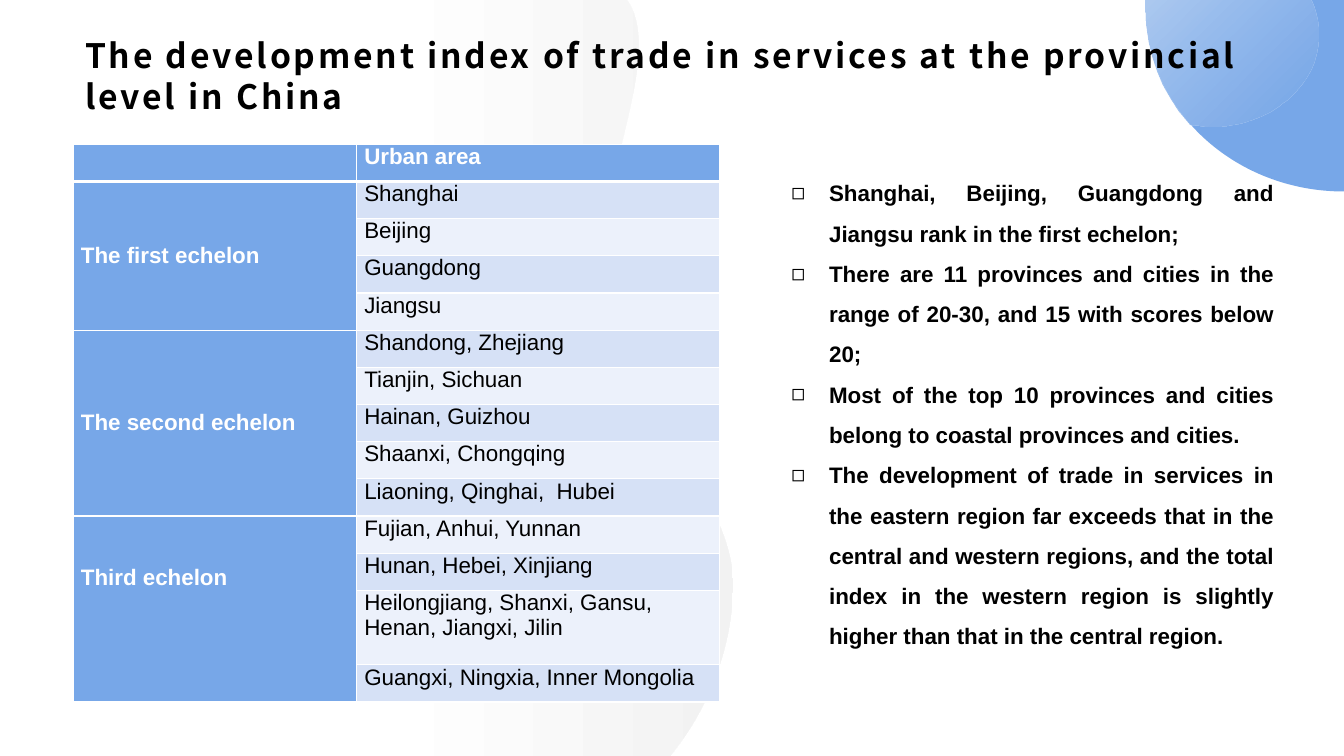
"""Builds the slide on the provincial trade in services index."""
from dataclasses import dataclass
from typing import Any, Optional

from lxml.etree import SubElement
from pptx import Presentation
from pptx.dml.color import RGBColor
from pptx.enum.text import MSO_ANCHOR, MSO_AUTO_SIZE, PP_ALIGN
from pptx.oxml.ns import qn
from pptx.util import Pt

BLUE = RGBColor(0x77, 0xA7, 0xE8)
LIGHT_BLUE = RGBColor(0xAD, 0xCA, 0xF1)
BAND_DARK = RGBColor(0xD6, 0xE1, 0xF6)
BAND_LIGHT = RGBColor(0xEC, 0xF1, 0xFB)
GREY = RGBColor(0xF2, 0xF2, 0xF2)
WHITE = RGBColor(0xFF, 0xFF, 0xFF)
BLACK = RGBColor(0, 0, 0)
TITLE_FONT = "Noto Sans CJK SC"
ROW_HEIGHT = 26.58


@dataclass
class Outline:
    start: tuple[float, float]
    steps: list[tuple[float, ...]]
    colors: list[RGBColor]
    angle: float = 0
    end_alpha: int = 100


@dataclass
class Echelon:
    name: str
    areas: list[str]
    top: Optional[float] = None


OUTLINES = [
    Outline((274.3, 540), [
        (274.3, 0), (447.8, 0), (449.3, 2.2),
        (475.2, 45.4, 419, 143.3, 431.3, 210.2),
        (444.2, 279.4, 520.6, 352.8, 523.4, 412.6),
        (524.9, 453.6, 509.8, 498.2, 485.3, 531.4), (478.8, 540),
    ], [WHITE, GREY]),
    Outline((818.6, 0), [
        (960, 0), (960, 136.8), (882, 136.8, 818.6, 78.5, 818.6, 6.5),
    ], [BLUE]),
    Outline((818.6, 0), [
        (936, 0), (938.2, 5), (940.3, 11.5, 941.8, 18, 941.8, 25.2),
        (941.8, 61.2, 907.2, 90.7, 864.7, 90.7),
        (862.6, 90.7, 859.7, 90.7, 857.5, 90), (851, 89.3), (850.3, 89.3),
        (830.2, 67, 818.6, 38.2, 818.6, 6.5),
    ], [LIGHT_BLUE, BLUE], 315, 70),
]

ECHELONS = [
    Echelon("The first echelon", ["Shanghai", "Beijing", "Guangdong", "Jiangsu"]),
    Echelon("The second echelon", [
        "Shandong, Zhejiang", "Tianjin, Sichuan", "Hainan, Guizhou",
        "Shaanxi, Chongqing", "Liaoning, Qinghai,  Hubei"]),
    Echelon("Third echelon", [
        "Fujian, Anhui, Yunnan", "Hunan, Hebei, Xinjiang",
        "Heilongjiang, Shanxi, Gansu,\nHenan, Jiangxi, Jilin",
        "Guangxi, Ningxia, Inner Mongolia"], 35.5),
]

FINDINGS = [
    "Shanghai, Beijing, Guangdong and Jiangsu rank in the first echelon;",
    "There are 11 provinces and cities in the range of 20-30, and 15 with scores below 20;",
    "Most of the top 10 provinces and cities belong to coastal provinces and cities.",
    "The development of trade in services in the eastern region far exceeds that in the "
    "central and western regions, and the total index in the western region is slightly "
    "higher than that in the central region.",
]


def write(tf: Any, text: str, *, size: float = 16, font: str = "Arial",
          color: RGBColor = BLACK, bold: bool = False, tracking: float = 0,
          align: PP_ALIGN = PP_ALIGN.LEFT, line: float = 1,
          bullet: str = "", hang: float = 0) -> None:
    for i, part in enumerate(text.split("\n")):
        p = tf.add_paragraph() if i else tf.paragraphs[0]
        p.alignment, p.line_spacing = align, line
        p.space_before = p.space_after = Pt(0)
        if bullet:
            pPr = p._p.get_or_add_pPr()
            pPr.set("marL", str(Pt(hang)))
            pPr.set("indent", str(-Pt(hang)))
            SubElement(pPr, qn("a:buChar"), char=bullet)
        r = p.add_run()
        r.text = part
        r.font.size, r.font.name, r.font.bold = Pt(size), font, bold
        r.font.color.rgb = color
        rPr = r._r.get_or_add_rPr()
        SubElement(rPr, qn("a:ea"), typeface=font)
        if tracking:
            rPr.set("spc", str(round(tracking * 100)))


def bend(sp: Any, steps: list[tuple[float, ...]]) -> None:
    lines = list(sp._element.spPr.iter(qn("a:lnTo")))
    for ln, step in zip(lines, steps):
        if len(step) == 6:
            ln.tag = qn("a:cubicBezTo")
            for pt in list(ln):
                ln.remove(pt)
            for x, y in zip(step[::2], step[1::2]):
                SubElement(ln, qn("a:pt"), x=str(Pt(x) - sp.left), y=str(Pt(y) - sp.top))


def draw_outline(s: Any, outline: Outline) -> None:
    x, y = outline.start
    builder = s.shapes.build_freeform(Pt(x), Pt(y))
    builder.add_line_segments([(Pt(p[-2]), Pt(p[-1])) for p in outline.steps], close=True)
    sp = builder.convert_to_shape()
    bend(sp, outline.steps)
    sp.shadow.inherit = False
    sp.line.fill.background()
    if len(outline.colors) == 1:
        sp.fill.solid()
        sp.fill.fore_color.rgb = outline.colors[0]
    else:
        sp.fill.gradient()
        sp.fill.gradient_angle = outline.angle
        for stop, color in zip(sp.fill.gradient_stops, outline.colors):
            stop.color.rgb = color
        if outline.end_alpha < 100:
            last = list(sp._element.spPr.iter(qn("a:srgbClr")))[-1]
            SubElement(last, qn("a:alpha"), val=str(outline.end_alpha * 1000))
    s.shapes.title._element.addprevious(sp._element)


def place(sp: Any, left: float, top: float, width: float, height: float) -> Any:
    sp.left, sp.top, sp.width, sp.height = Pt(left), Pt(top), Pt(width), Pt(height)
    tf = sp.text_frame
    tf.word_wrap, tf.auto_size = True, MSO_AUTO_SIZE.NONE
    tf.vertical_anchor = MSO_ANCHOR.TOP
    return tf


def format_cell(cell: Any, fill: RGBColor, bottom: float = 1, top: float = 1) -> None:
    cell.margin_left = cell.margin_right = Pt(5.4)
    cell.margin_top = cell.margin_bottom = Pt(0)
    tcPr = cell._tc.get_or_add_tcPr()
    for side, width in (("L", 1), ("R", 1), ("T", top), ("B", bottom)):
        ln = SubElement(tcPr, qn(f"a:ln{side}"), w=str(Pt(width)))
        SubElement(SubElement(ln, qn("a:solidFill")), qn("a:srgbClr"), val=str(WHITE))
    cell.fill.solid()
    cell.fill.fore_color.rgb = fill


def draw_table(s: Any) -> None:
    count = 1 + sum(len(e.areas) for e in ECHELONS)
    table = s.shapes.add_table(count, 2, Pt(52.4), Pt(103), Pt(461.6),
                               Pt(ROW_HEIGHT * (count + 1))).table
    table.columns[0].width, table.columns[1].width = Pt(202.4), Pt(259.2)
    for cell in table.rows[0].cells:
        format_cell(cell, BLUE, bottom=3)
    write(table.cell(0, 1).text_frame, "Urban area", color=WHITE, bold=True)
    table.rows[0].height = Pt(ROW_HEIGHT)
    row = 1
    for e in ECHELONS:
        name = table.cell(row, 0)
        name.merge(table.cell(row + len(e.areas) - 1, 0))
        write(name.text_frame, e.name, color=WHITE, bold=True)
        for area in e.areas:
            top = 3 if row == 1 else 1
            table.rows[row].height = Pt(ROW_HEIGHT * len(area.split("\n")))
            format_cell(table.cell(row, 0), BLUE, top=top)
            format_cell(table.cell(row, 1), BAND_DARK if row % 2 else BAND_LIGHT, top=top)
            write(table.cell(row, 1).text_frame, area)
            row += 1
        name.vertical_anchor = MSO_ANCHOR.MIDDLE if e.top is None else MSO_ANCHOR.TOP
        name.margin_top = Pt(e.top or 0)


def main() -> None:
    prs = Presentation()
    prs.slide_width, prs.slide_height = Pt(960), Pt(540)
    s = prs.slides.add_slide(prs.slide_layouts[1])
    for outline in OUTLINES:
        draw_outline(s, outline)
    tf = place(s.shapes.title, 52.8, 21.6, 854.6, 34.6)
    tf.margin_left, tf.margin_right = Pt(7.9), Pt(5.8)
    write(tf, "The development index of trade in services at the provincial level in China",
          size=24, font=TITLE_FONT, bold=True, tracking=2)
    tf = place(s.placeholders[1], 558, 115, 359.3, 352.8)
    write(tf, "\n".join(FINDINGS), bold=True, align=PP_ALIGN.JUSTIFY, line=1.5,
          bullet="◻", hang=27)
    draw_table(s)
    prs.save("out.pptx")


if __name__ == "__main__":
    main()
